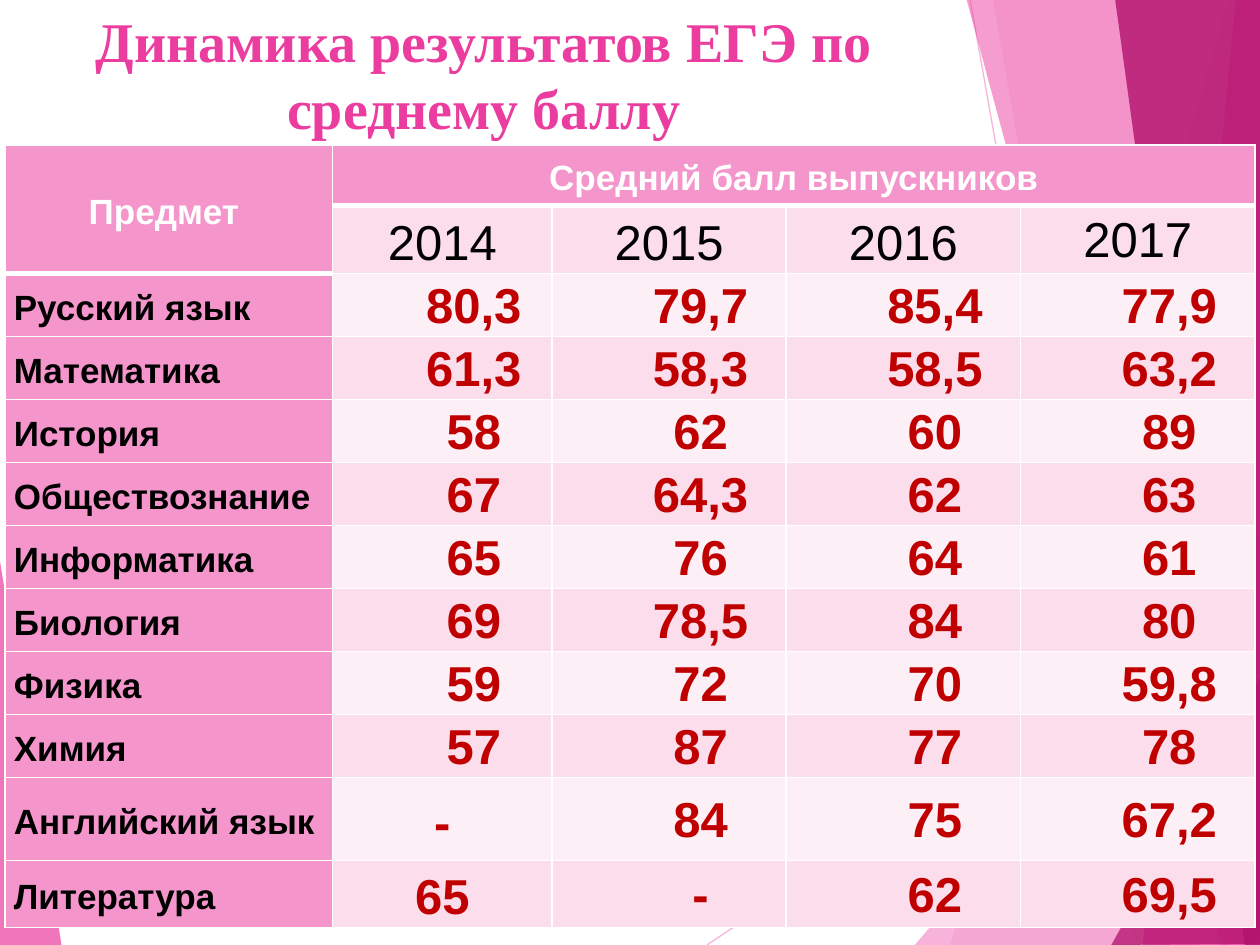
from lxml import etree
from pptx import Presentation
from pptx.dml.color import RGBColor
from pptx.enum.shapes import MSO_CONNECTOR
from pptx.enum.text import MSO_ANCHOR, PP_ALIGN
from pptx.oxml.ns import qn
from pptx.util import Inches, Pt

LEFT, CENTER = PP_ALIGN.LEFT, PP_ALIGN.CENTER
TOP, MIDDLE = MSO_ANCHOR.TOP, MSO_ANCHOR.MIDDLE

PALE, PINK, DARK = "F496CB", "EB3D9F", "B2136D"
WHITE, BLACK, RED = "FFFFFF", "000000", "C00000"
BANDS = ("FBDDEC", "FDEFF6")

TITLE = "Динамика результатов ЕГЭ по среднему баллу"
YEARS = ("2014", "2015", "2016", "2017")
SCORES = [
    ("Русский язык", "80,3", "79,7", "85,4", "77,9"),
    ("Математика", "61,3", "58,3", "58,5", "63,2"),
    ("История", "58", "62", "60", "89"),
    ("Обществознание", "67", "64,3", "62", "63"),
    ("Информатика", "65", "76", "64", "61"),
    ("Биология", "69", "78,5", "84", "80"),
    ("Физика", "59", "72", "70", "59,8"),
    ("Химия", "57", "87", "77", "78"),
    ("Английский язык", "-", "84", "75", "67,2"),
    ("Литература", "65", "-", "62", "69,5"),
]
NOT_INDENTED = {("Английский язык", "2014"), ("Литература", "2014")}
COL_WIDTHS = [2.6, 1.74] + [1.86] * 3
ROW_HEIGHTS = [0.48, 0.54] + [0.5] * 8 + [0.66, 0.53]

RAYS = [((5.61, 7.5), (10.01, 4.57)), ((7.7, 0), (9.03, 7.5))]
# colour, opacity in percent, corners
FACETS = [
    (PALE, 36, [(9.75, 0), (7.54, 7.5), (10.02, 7.51), (10.01, 0.01)]),
    (PALE, 20, [(7.88, -0.01), (9.19, 7.5), (10.01, 7.5), (10.01, -0.01)]),
    (PALE, 72, [(7.26, 7.5), (10, 4.29), (10.01, 7.5)]),
    (PINK, 50, [(7.67, -0.01), (9.7, 7.5), (10.01, 7.49), (10.01, -0.01)]),
    (PINK, 66, [(9.81, -0.01), (9.07, 7.5), (10.01, 7.5), (10, -0.01)]),
    (DARK, 80, [(8.85, -0.01), (9.88, 7.5), (10.02, 7.5), (10, -0.01)]),
    (DARK, 76, [(8.82, 7.5), (10.02, 5.35), (10.02, 7.49)]),
    (PINK, 70, [(-0.01, 4.39), (0.49, 7.51), (-0.01, 7.5)]),
]


def paint(fill, color):
    fill.solid()
    fill.fore_color.rgb = RGBColor.from_string(color)


def set_opacity(sp, percent):
    """Make the shape's only colour, of fill or line, see-through."""
    clr = sp._element.spPr.find(".//" + qn("a:srgbClr"))
    etree.SubElement(clr, qn("a:alpha"), val=str(percent * 1000))


def add_ray(slide, start, end):
    ray = slide.shapes.add_connector(
        MSO_CONNECTOR.STRAIGHT, *(Inches(v) for v in start + end))
    ray.line.width = Pt(0.75)
    paint(ray.line.fill, PALE)
    set_opacity(ray, 70)
    etree.SubElement(ray._element.spPr, qn("a:effectLst"))


def add_facet(slide, color, opacity, corners):
    points = [(Inches(x), Inches(y)) for x, y in corners]
    builder = slide.shapes.build_freeform(*points[0])
    builder.add_line_segments(points[1:], close=True)
    sp = builder.convert_to_shape()
    sp.shadow.inherit = False
    sp.line.fill.background()
    paint(sp.fill, color)
    set_opacity(sp, opacity)


def format_paragraph(p, size, color, bold, font="Arial", align=CENTER, spacing=1.15):
    p.alignment, p.line_spacing = align, spacing
    for r in p.runs:
        r.font.name, r.font.size, r.font.bold = font, Pt(size), bold
        paint(r.font.fill, color)


def set_borders(cell, bottom):
    """White 1 pt borders, with the bottom one as wide as given."""
    tc_pr = cell._tc.get_or_add_tcPr()
    for i, (side, width) in enumerate(
            [("L", 1), ("R", 1), ("T", 1), ("B", bottom)]):
        ln = etree.Element(qn("a:ln" + side), w=str(Pt(width)))
        fill = etree.SubElement(ln, qn("a:solidFill"))
        etree.SubElement(fill, qn("a:srgbClr"), val=WHITE)
        tc_pr.insert(i, ln)


def fill_cell(cell, text, fill, size, color, bold=True, anchor=MIDDLE,
              bottom=1, indent=0, **paragraph):
    cell.text_frame.text = text
    cell.vertical_anchor = anchor
    cell.margin_left = cell.margin_right = Inches(0.07)
    cell.margin_top = cell.margin_bottom = 0
    paint(cell.fill, fill)
    set_borders(cell, bottom)
    p = cell.text_frame.paragraphs[0]
    format_paragraph(p, size, color, bold, **paragraph)
    if indent:
        p._p.get_or_add_pPr().set("marL", str(Inches(indent)))


def add_scores(slide):
    table = slide.shapes.add_table(
        len(ROW_HEIGHTS), len(COL_WIDTHS), Inches(0.04), Inches(1.15),
        Inches(sum(COL_WIDTHS)), Inches(sum(ROW_HEIGHTS))).table
    for column, width in zip(table.columns, COL_WIDTHS):
        column.width = Inches(width)
    for row, height in zip(table.rows, ROW_HEIGHTS):
        row.height = Inches(height)

    table.cell(0, 0).merge(table.cell(1, 0))
    table.cell(0, 1).merge(table.cell(0, len(YEARS)))
    fill_cell(table.cell(0, 0), "Предмет ", PALE, 20, WHITE, bottom=3)
    fill_cell(table.cell(0, 1), "Средний балл выпускников", PALE, 20, WHITE, bottom=3)
    set_borders(table.cell(1, 0), 3)
    for c in range(2, len(COL_WIDTHS)):
        set_borders(table.cell(0, c), 3)

    for c, year in enumerate(YEARS, 1):
        fill_cell(table.cell(1, c), year, BANDS[0], 28, BLACK, bold=False,
                  anchor=TOP if year == YEARS[-1] else MIDDLE)
    for r, (subject, *scores) in enumerate(SCORES, 2):
        fill_cell(table.cell(r, 0), subject, PALE, 20, BLACK, align=LEFT)
        for c, (year, score) in enumerate(zip(YEARS, scores), 1):
            plain = (subject, year) in NOT_INDENTED
            fill_cell(table.cell(r, c), score, BANDS[(r + 1) % 2], 28, RED,
                      indent=0 if plain else 0.5,
                      spacing=1.15 if plain else 1.07)


def add_title(slide):
    title = slide.shapes.title
    title.left, title.top = Inches(0), Inches(0)
    title.width, title.height = Inches(7.68), Inches(1.44)
    tf = title.text_frame
    tf.text = TITLE
    tf.word_wrap = True
    tf.vertical_anchor = TOP
    tf.margin_top = Inches(0.05)
    format_paragraph(tf.paragraphs[0], 32, PINK, True,
                     font="Times New Roman", spacing=1.0)


def main():
    prs = Presentation()
    prs.slide_width, prs.slide_height = Inches(10), Inches(7.5)
    slide = prs.slides.add_slide(prs.slide_layouts[5])
    for start, end in RAYS:
        add_ray(slide, start, end)
    for facet in FACETS:
        add_facet(slide, *facet)
    add_title(slide)
    add_scores(slide)
    prs.save("out.pptx")


if __name__ == "__main__":
    main()
